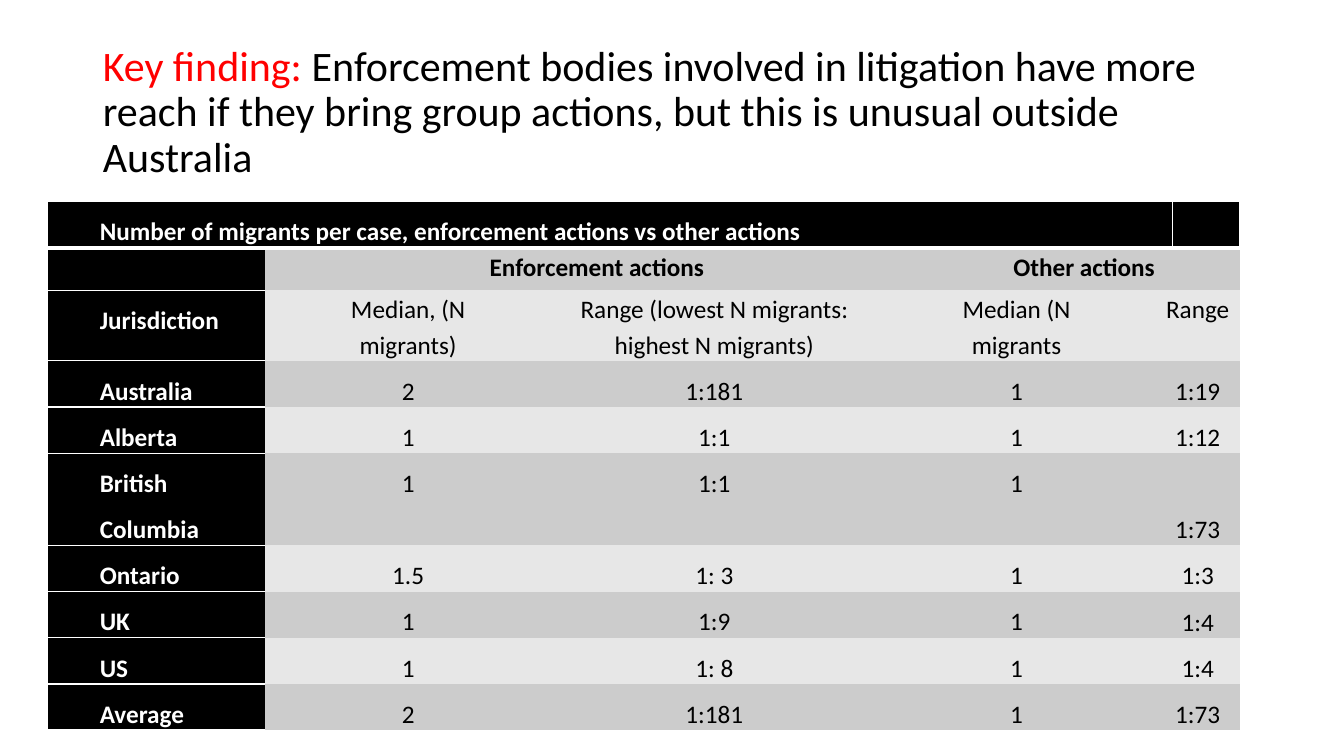
from lxml import etree
from pptx import Presentation
from pptx import util as u
from pptx.dml.color import RGBColor
from pptx.enum import text
from pptx.oxml import ns

BLACK = RGBColor(0x00, 0x00, 0x00)
WHITE = RGBColor(0xFF, 0xFF, 0xFF)
RED = RGBColor(0xFF, 0x00, 0x00)
MID_GREY = RGBColor(0xCC, 0xCC, 0xCC)
LIGHT_GREY = RGBColor(0xE7, 0xE7, 0xE7)
FONT = "Calibri"
NO_STYLE = "{2D5ABB26-0587-4C30-8999-92F81FD0307C}"

WIDTH, HEIGHT = u.Inches(13.33), u.Inches(7.5)
COLUMNS = [2.16, 2.33, 3.74, 2.25, 0.67, 0.67]
ROWS = [0.38, 0.38, 0.45, 0.38, 0.38, 0.8, 0.38, 0.38, 0.38, 0.38]

CAPTION = "Number of migrants per case, enforcement actions vs other actions"
SUBHEADS = ["Jurisdiction", "Median, (N migrants)",
            "Range (lowest N migrants: highest N migrants)",
            "Median (N migrants", "Range"]
RESULTS = [
    ["Australia", "2", "1:181", "1", "1:19"],
    ["Alberta", "1", "1:1", "1", "1:12"],
    ["British Columbia", "1", "1:1", "1", "1:73"],
    ["Ontario", "1.5", "1: 3", "1", "1:3"],
    ["UK", "1", "1:9", "1", "1:4"],
    ["US", "1", "1: 8", "1", "1:4"],
    ["Average", "2", "1:181", "1", "1:73"],
]


def add_run(p, words, size, color, bold=None):
    r = p.add_run()
    r.text = words
    r.font.name = FONT
    r.font.size = u.Pt(size)
    r.font.bold = bold
    r.font.color.rgb = color


def add_title(s, box):
    sp = s.shapes.title
    sp.left, sp.top, sp.width, sp.height = box
    tf = sp.text_frame
    tf.word_wrap = True
    tf.auto_size = text.MSO_AUTO_SIZE.NONE
    tf.vertical_anchor = text.MSO_ANCHOR.MIDDLE
    p = tf.paragraphs[0]
    p.alignment = text.PP_ALIGN.LEFT
    p.line_spacing = 0.9
    add_run(p, "Key finding: ", 30, RED)
    add_run(p, "Enforcement bodies involved in litigation have more reach "
               "if they bring group actions, but this is unusual outside "
               "Australia", 30, BLACK)


def set_borders(cell, widths):
    tc_pr = cell._tc.get_or_add_tcPr()
    sides = [side for side in "LRTB" if side in widths]
    for i, side in enumerate(sides):
        ln = etree.Element(ns.qn("a:ln" + side), w=str(u.Pt(widths[side])))
        fill = etree.SubElement(ln, ns.qn("a:solidFill"))
        etree.SubElement(fill, ns.qn("a:srgbClr"), val=str(WHITE))
        tc_pr.insert(i, ln)


def prepare_cell(cell, fill):
    cell.fill.solid()
    cell.fill.fore_color.rgb = fill
    cell.margin_left = cell.margin_right = u.Inches(0.02)
    cell.margin_top = cell.margin_bottom = 0
    p = cell.text_frame.paragraphs[0]
    p.font.size = u.Pt(18)
    p.line_spacing = 1.5


def write_cell(cell, words, color=BLACK, bold=False, centered=True, spacing=1.5):
    p = cell.text_frame.paragraphs[0]
    p.alignment = text.PP_ALIGN.CENTER if centered else text.PP_ALIGN.LEFT
    p.line_spacing = spacing
    p._p.get_or_add_pPr().set("marL", str(u.Inches(0.5)))
    add_run(p, words, 18, color, bold)


def add_results_table(s, box):
    gf = s.shapes.add_table(len(ROWS), len(COLUMNS), *box)
    table = gf.table
    gf._element.find(".//" + ns.qn("a:tableStyleId")).text = NO_STYLE
    table.first_row = table.horz_banding = False
    for column, share in zip(table.columns, COLUMNS):
        column.width = int(box[2] * share / sum(COLUMNS))
    for row, share in zip(table.rows, ROWS):
        row.height = int(box[3] * share / sum(ROWS))

    for i in range(len(ROWS)):
        band = MID_GREY if i % 2 else LIGHT_GREY
        for j in range(len(COLUMNS)):
            prepare_cell(table.cell(i, j), BLACK if i == 0 or j == 0 else band)
        if i:
            set_borders(table.cell(i, 0), {"L": 1, "T": 1, "B": 1})
        if i > 1:
            table.cell(i, 4).merge(table.cell(i, 5))
    set_borders(table.cell(0, 0), {"L": 1, "R": 1, "T": 1, "B": 3})
    set_borders(table.cell(0, 5), {"L": 1, "R": 1, "T": 1})

    for i, first, last in [(0, 0, 4), (1, 1, 2), (1, 3, 5)]:
        table.cell(i, first).merge(table.cell(i, last))
    write_cell(table.cell(0, 0), CAPTION, WHITE, True, False)
    for j, words in [(1, "Enforcement actions"), (3, "Other actions")]:
        write_cell(table.cell(1, j), words, bold=True, spacing=1.15)

    for i, values in enumerate([SUBHEADS] + RESULTS, 2):
        write_cell(table.cell(i, 0), values[0], WHITE, True, False)
        for j, words in enumerate(values[1:], 1):
            write_cell(table.cell(i, j), words, spacing=1.15 if i == 2 else 1.5)
        if i > 2:
            table.cell(i, 4).vertical_anchor = text.MSO_ANCHOR.BOTTOM


def main():
    prs = Presentation()
    prs.slide_width, prs.slide_height = WIDTH, HEIGHT
    s = prs.slides.add_slide(prs.slide_layouts[5])
    add_title(s, [u.Inches(n) for n in (0.92, 0.4, 11.5, 1.45)])
    add_results_table(s, [u.Inches(n) for n in (0.47, 2, 11.83, 4.75)])
    prs.save("out.pptx")


if __name__ == "__main__":
    main()
